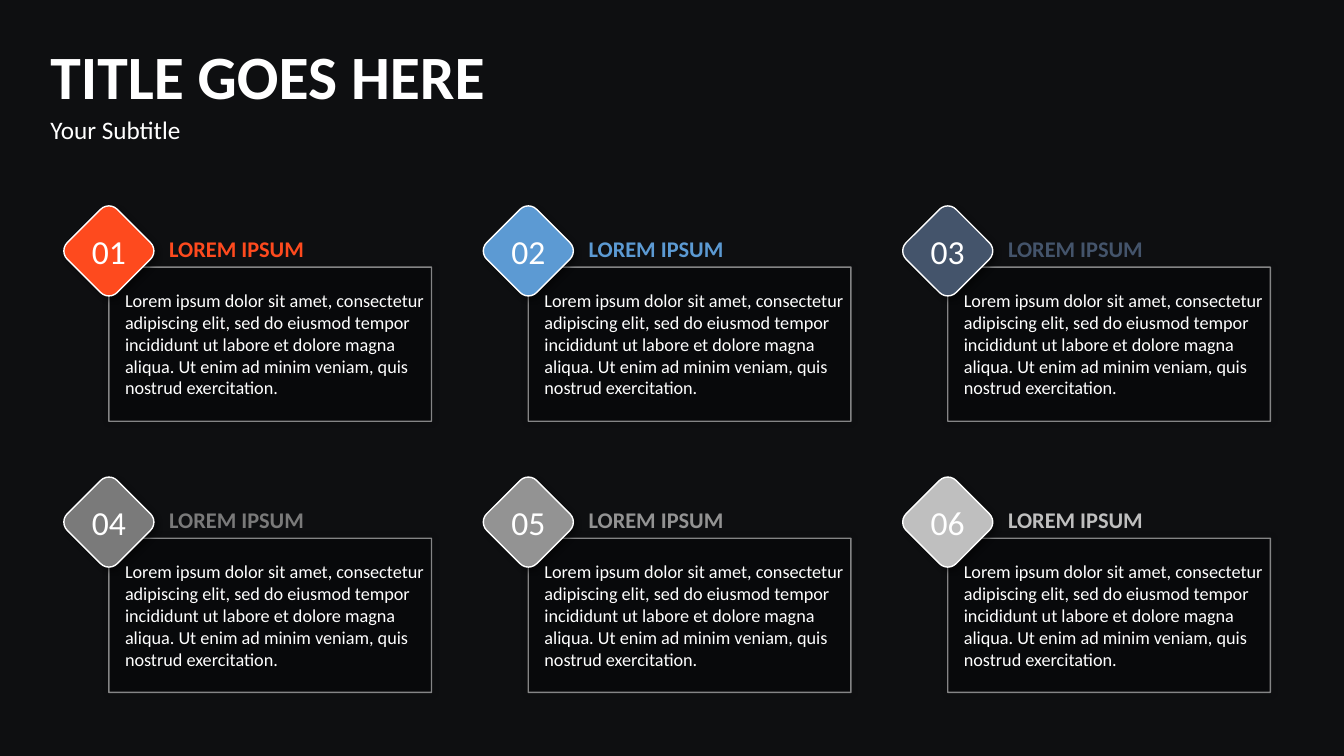
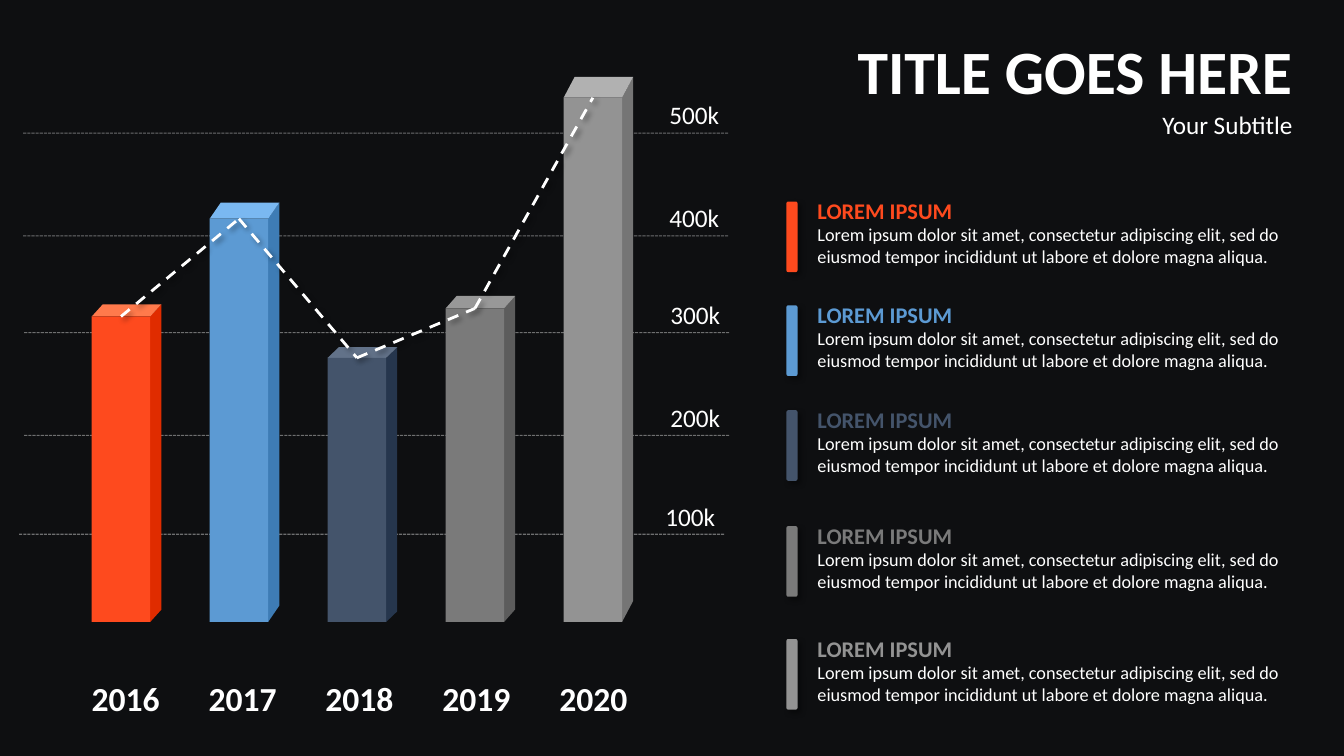
"""Build a dark two-slide deck: six numbered cards and a column infographic."""
from lxml import etree
from pptx import Presentation
from pptx.dml.color import RGBColor
from pptx.enum.dml import MSO_LINE
from pptx.enum.shapes import MSO_CONNECTOR, MSO_SHAPE
from pptx.enum.text import MSO_ANCHOR, MSO_AUTO_SIZE, PP_ALIGN
from pptx.oxml.ns import qn
from pptx.util import Inches, Pt

LEFT, CENTER, RIGHT = PP_ALIGN.LEFT, PP_ALIGN.CENTER, PP_ALIGN.RIGHT
RECTANGLE, ROUNDED = MSO_SHAPE.RECTANGLE, MSO_SHAPE.ROUNDED_RECTANGLE
STRAIGHT = MSO_CONNECTOR.STRAIGHT
DASH, FINE_DASH = MSO_LINE.DASH, MSO_LINE.SQUARE_DOT
TOP_ANCHOR, FIXED_SIZE = MSO_ANCHOR.TOP, MSO_AUTO_SIZE.NONE

FONT = "Calibri"
COLORS = {
    "background": "0E0F11", "black": "000000", "white": "FFFFFF",
    "orange": "FE4A1E", "orange side": "E02C00", "orange top": "FF7A4C",
    "blue": "5C9AD3", "blue side": "3E7CB5", "blue top": "7AB8F1",
    "slate": "44546B", "slate side": "26364D", "slate top": "627289",
    "gray": "7A7A7A", "gray side": "5C5C5C", "gray top": "989898",
    "silver": "939393", "silver side": "757575", "silver top": "B1B1B1",
    "pale": "BFBFBF",
}
ACCENTS = ["orange", "blue", "slate", "gray", "silver", "pale"]
TITLE, SUBTITLE, HEADING = "TITLE GOES HERE", "Your Subtitle", "LOREM IPSUM"
SHORT_TEXT = (
    "Lorem ipsum dolor sit amet, consectetur adipiscing elit, sed do "
    "eiusmod tempor incididunt ut labore et dolore magna aliqua."
)
LONG_TEXT = SHORT_TEXT + " Ut enim ad minim veniam, quis nostrud exercitation."
SOFT_GLOW = (5, 0, 0)
DROP_SHADOW = (4, 3, 45)

GRID = [("500k", 0.23, 1.32), ("400k", 0.23, 2.34), ("300k", 0.24, 3.3),
        ("200k", 0.24, 4.32), ("100k", 0.19, 5.3)]
COLUMN_TOPS = {"2016": 3.14, "2017": 2.17, "2018": 3.55, "2019": 3.06, "2020": 0.97}
COLUMN_BASE, COLUMN_WIDTH, COLUMN_DEPTH = 6.17, 0.58, 0.11
RISE_RATIO = 0.04
LEGEND_TOPS = [2, 3.03, 4.07, 5.22, 6.34]


def rgb(name):
    return RGBColor.from_string(COLORS[name])


class Deck:
    """Shared style, the presentation and the current page."""

    def __init__(self):
        self.presentation = Presentation()
        self.presentation.slide_width = Inches(13.33)
        self.presentation.slide_height = Inches(7.5)
        fill = self.presentation.slide_master.background.fill
        fill.solid()
        fill.fore_color.rgb = rgb("background")
        self.page = None

    def add_page(self, left, top, width, align=LEFT):
        layout = self.presentation.slide_layouts[1]
        self.page = self.presentation.slides.add_slide(layout)
        title, subtitle = self.page.placeholders
        self.place(title, left, top, width, 0.85)
        self.fill_text(title, TITLE, 44, bold=True, align=align)
        self.place(subtitle, left, top + 0.75, width, 0.4)
        properties = subtitle.text_frame.paragraphs[0]._p.get_or_add_pPr()
        properties.set("marL", "0")
        properties.set("indent", "0")
        etree.SubElement(properties, qn("a:buNone"))
        self.fill_text(subtitle, SUBTITLE, 18, align=align)

    def place(self, box, left, top, width, height):
        box.left, box.top = Inches(left), Inches(top)
        box.width, box.height = Inches(width), Inches(height)

    def fill_text(self, box, text, size, color="white", bold=False, align=LEFT):
        frame = box.text_frame
        frame.word_wrap = True
        frame.auto_size = FIXED_SIZE
        frame.vertical_anchor = TOP_ANCHOR
        para = frame.paragraphs[0]
        para.alignment = align
        para.space_before = Pt(0)
        span = para.add_run()
        span.text = text
        span.font.name, span.font.size, span.font.bold = FONT, Pt(size), bold
        span.font.color.rgb = rgb(color)

    def text(self, left, top, width, height, text, size, inset=True, **style):
        box = self.page.shapes.add_textbox(
            Inches(left), Inches(top), Inches(width), Inches(height))
        if not inset:
            frame = box.text_frame
            frame.margin_left = frame.margin_right = 0
            frame.margin_top = frame.margin_bottom = 0
        self.fill_text(box, text, size, **style)

    def fade(self, parent, percent):
        color = parent.find(qn("a:solidFill")).find(qn("a:srgbClr"))
        etree.SubElement(color, qn("a:alpha"), val=str(percent * 1000))

    def effects(self, shape, shadow=None):
        effects = etree.SubElement(shape._element.spPr, qn("a:effectLst"))
        if shadow:
            blur, distance, angle = shadow
            outer = etree.SubElement(
                effects, qn("a:outerShdw"), blurRad=str(Pt(blur)),
                dist=str(Pt(distance)), dir=str(angle * 60000),
                algn="tl", rotWithShape="0")
            color = etree.SubElement(outer, qn("a:srgbClr"), val=COLORS["black"])
            etree.SubElement(color, qn("a:alpha"), val="40000")

    def paint(self, shape, color, outline=False, shadow=None):
        shape.fill.solid()
        shape.fill.fore_color.rgb = rgb(color)
        if outline:
            shape.line.color.rgb = rgb("white")
            shape.line.width = Pt(1)
        else:
            shape.line.fill.background()
        self.effects(shape, shadow)

    def shape(self, kind, left, top, width, height, color, **style):
        shape = self.page.shapes.add_shape(
            kind, Inches(left), Inches(top), Inches(width), Inches(height))
        self.paint(shape, color, **style)
        return shape

    def polygon(self, points, color):
        start, *others = [(Inches(x), Inches(y)) for x, y in points]
        builder = self.page.shapes.build_freeform(*start)
        builder.add_line_segments(others, close=True)
        self.paint(builder.convert_to_shape(), color)

    def line(self, start, end, width, dash, opacity=100, shadow=None):
        line = self.page.shapes.add_connector(
            STRAIGHT, *(Inches(value) for value in (*start, *end)))
        line.line.color.rgb = rgb("white")
        line.line.width = Pt(width)
        line.line.dash_style = dash
        if opacity < 100:
            self.fade(line._element.spPr.find(qn("a:ln")), opacity)
        self.effects(line, shadow)
        return line

    def card(self, left, top, number, color):
        panel = self.shape(RECTANGLE, left, top, 3.2, 1.53, "black",
                           outline=True, shadow=SOFT_GLOW)
        properties = panel._element.spPr
        self.fade(properties, 25)
        self.fade(properties.find(qn("a:ln")), 50)
        self.text(left + 0.5, top - 0.37, 2.3, 0.37, HEADING, 16, color=color, bold=True)
        self.text(left + 0.16, top + 0.22, 3.04, 1.09, LONG_TEXT, 13, inset=False)
        diamond = self.shape(ROUNDED, left - 0.35, top - 0.51, 0.7, 0.7, color,
                             outline=True, shadow=DROP_SHADOW)
        diamond.rotation = 45
        self.text(left - 0.27, top - 0.41, 0.54, 0.5, f"{number:02}", 24, align=CENTER)

    def column(self, left, top, color):
        rise = (COLUMN_BASE - top) * RISE_RATIO
        right = left + COLUMN_WIDTH
        back = right + COLUMN_DEPTH
        self.polygon([(right, top), (back, top - rise), (back, COLUMN_BASE - rise),
                      (right, COLUMN_BASE)], color + " side")
        self.polygon([(left, top), (left + COLUMN_DEPTH, top - rise),
                      (back, top - rise), (right, top)], color + " top")
        return self.shape(RECTANGLE, left, top, COLUMN_WIDTH, COLUMN_BASE - top, color)

    def trend(self, columns):
        for first, second in zip(columns, columns[1:]):
            line = self.line((0, 0), (1, 1), 2, DASH, shadow=DROP_SHADOW)
            line.begin_connect(first, 0)
            line.end_connect(second, 0)

    def legend(self, top, color):
        self.text(8.01, top + 0.17, 4.96, 0.76, SHORT_TEXT, 13)
        self.text(8.01, top - 0.09, 3.1, 0.37, HEADING, 16, color=color, bold=True)
        self.shape(ROUNDED, 7.8, top, 0.11, 0.7, color, shadow=DROP_SHADOW)


def build_cards(deck):
    deck.add_page(0.4, 0.33, 6.5)
    for index, color in enumerate(ACCENTS):
        row, position = divmod(index, 3)
        deck.card(1.08 + 4.16 * position, 2.65 + 2.69 * row, index + 1, color)


def build_columns(deck):
    deck.add_page(6.9, 0.28, 6.02, RIGHT)
    for label, left, top in GRID:
        deck.line((left, top), (left + 7, top), 0.75, FINE_DASH, opacity=40)
        deck.text(left + 6.25, top - 0.38, 0.81, 0.4, label, 18, align=CENTER)
    columns = []
    for index, (year, top) in enumerate(COLUMN_TOPS.items()):
        deck.text(0.81 + 1.16 * index, 6.68, 0.9, 0.5, year, 24, bold=True)
        columns.append(deck.column(0.91 + 1.17 * index, top, ACCENTS[index]))
    deck.trend(columns)
    for top, color in zip(LEGEND_TOPS, ACCENTS):
        deck.legend(top, color)


def main():
    deck = Deck()
    build_cards(deck)
    build_columns(deck)
    deck.presentation.save("out.pptx")


if __name__ == "__main__":
    main()
